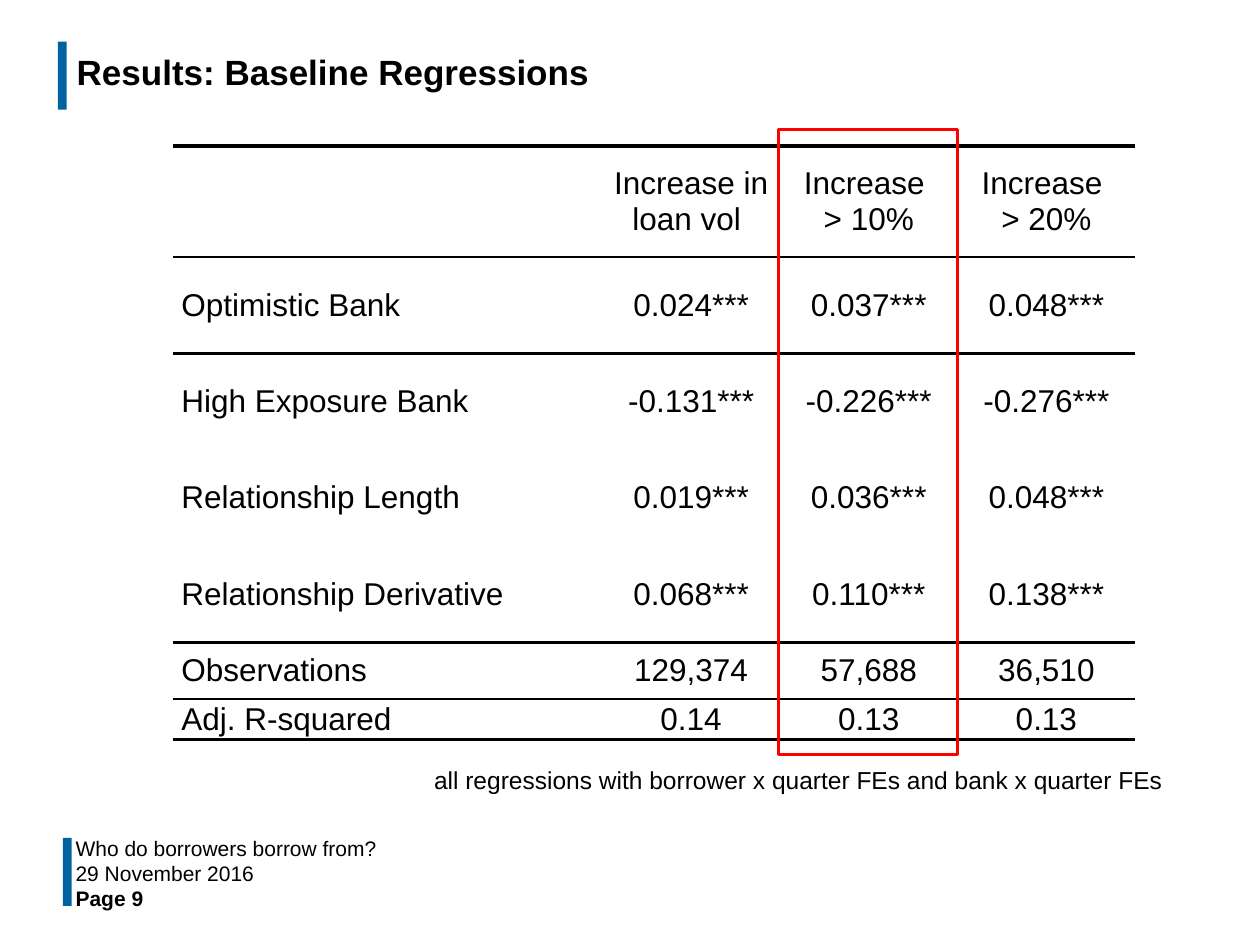
from lxml.etree import SubElement
from pptx import Presentation
from pptx.dml.color import RGBColor
from pptx.enum.shapes import MSO_SHAPE
from pptx.enum.text import MSO_ANCHOR, PP_ALIGN
from pptx.oxml.ns import qn
from pptx.util import Inches, Pt

# Content
TITLE = "Results: Baseline Regressions"
NOTE = "all regressions with borrower x quarter FEs and bank x quarter FEs"
FOOTER = [("Who do borrowers borrow from?", False),
          ("29 November 2016", False),
          ("Page 9", True)]
ROWS = [
    ("", "Increase in loan vol ", "Increase \n> 10%", "Increase \n> 20%"),
    ("Optimistic Bank", "0.024***", "0.037***", "0.048***"),
    ("High Exposure Bank", "-0.131***", "-0.226***", "-0.276***"),
    ("Relationship Length", "0.019***", "0.036***", "0.048***"),
    ("Relationship Derivative", "0.068***", "0.110***", "0.138***"),
    ("Observations", "129,374", "57,688", "36,510"),
    ("Adj. R-squared", "0.14", "0.13", "0.13"),
]
COL_WIDTHS = [3.41, 1.41, 1.41, 1.41]
ROW_HEIGHTS = [0.88] + [0.765] * 4 + [0.45, 0.32]
RULES = {0: 2.25, 1: 1.5, 2: 1.5, 5: 1.5, 6: 1.5, 7: 2.25}  # row edge: points

THEME = {
    "font": "Arial", "text": "000000", "accent": "0062A1", "highlight": "FF0000",
    "title": 20, "table": 18, "note": 14, "footer": 12,
}


def rgb(name):
    return RGBColor.from_string(THEME[name])


def write(p, text, size, bold=False):
    for i, line in enumerate(text.split("\n")):
        if i:
            p.add_line_break()
        r = p.add_run()
        r.text = line
        r.font.name = THEME["font"]
        r.font.size = Pt(THEME[size])
        r.font.bold = bold
        r.font.color.rgb = rgb("text")


def add_text(s, box, text, size, bold=False, anchor=MSO_ANCHOR.MIDDLE,
             inset=(0.1, 0.05)):
    tf = s.shapes.add_textbox(*map(Inches, box)).text_frame
    tf.word_wrap = True
    tf.vertical_anchor = anchor
    tf.margin_left = tf.margin_right = Inches(inset[0])
    tf.margin_top = tf.margin_bottom = Inches(inset[1])
    p = tf.paragraphs[0]
    write(p, text, size, bold)
    return p


def add_rect(s, *box):
    sp = s.shapes.add_shape(MSO_SHAPE.RECTANGLE, *map(Inches, box))
    sp.shadow.inherit = False
    return sp


def set_borders(cell, top, bottom):
    tcPr = cell._tc.get_or_add_tcPr()
    edges = [("a:lnL", None), ("a:lnR", None), ("a:lnT", top), ("a:lnB", bottom)]
    for tag, width in edges:
        ln = SubElement(tcPr, qn(tag))
        if width:
            ln.set("w", str(Pt(width)))
            fill = SubElement(ln, qn("a:solidFill"))
            SubElement(fill, qn("a:srgbClr")).set("val", THEME["text"])
        else:
            SubElement(ln, qn("a:noFill"))


def add_results(s, left, top):
    tbl = s.shapes.add_table(len(ROWS), len(COL_WIDTHS), Inches(left), Inches(top),
                             Inches(sum(COL_WIDTHS)), Inches(sum(ROW_HEIGHTS))).table
    tbl.first_row = tbl.horz_banding = False
    for col, width in zip(tbl.columns, COL_WIDTHS):
        col.width = Inches(width)
    for i, (values, height) in enumerate(zip(ROWS, ROW_HEIGHTS)):
        tbl.rows[i].height = Inches(height)
        for j, value in enumerate(values):
            cell = tbl.cell(i, j)
            cell.margin_left = cell.margin_right = Inches(0.07)
            cell.margin_top = cell.margin_bottom = 0
            cell.vertical_anchor = MSO_ANCHOR.MIDDLE
            set_borders(cell, RULES.get(i), RULES.get(i + 1))
            cell.fill.background()
            p = cell.text_frame.paragraphs[0]
            p.alignment = PP_ALIGN.CENTER if j else PP_ALIGN.LEFT
            if value:
                write(p, value, "table")


def main():
    prs = Presentation()
    prs.slide_width, prs.slide_height = Inches(10), Inches(7.5)
    s = prs.slides.add_slide(prs.slide_layouts[6])

    # Accent bars beside title and footer
    for left, top in [(0.46, 0.33), (0.5, 6.65)]:
        bar = add_rect(s, left, top, 0.07, 0.54)
        bar.fill.solid()
        bar.fill.fore_color.rgb = rgb("accent")
        bar.line.fill.background()

    # Title and footer
    p = add_text(s, (0.51, 0.28, 9.29, 0.63), TITLE, "title", bold=True)
    p.line_spacing = Pt(20.4)
    for i, (text, bold) in enumerate(FOOTER):
        add_text(s, (0.51, 6.64 + 0.2 * i, 8.88, 0.18), text, "footer", bold,
                 inset=(0.09, 0.04))

    # Regression table and its note
    add_results(s, 1.37, 1.16)
    p = add_text(s, (0.98, 6.02, 8.35, 0.34), NOTE, "note", anchor=MSO_ANCHOR.TOP)
    p.alignment = PP_ALIGN.RIGHT

    # Frame around the main specification
    frame = add_rect(s, 6.18, 1.03, 1.42, 4.96)
    frame.fill.background()
    frame.line.color.rgb = rgb("highlight")
    frame.line.width = Pt(2)

    prs.save("out.pptx")


if __name__ == "__main__":
    main()
